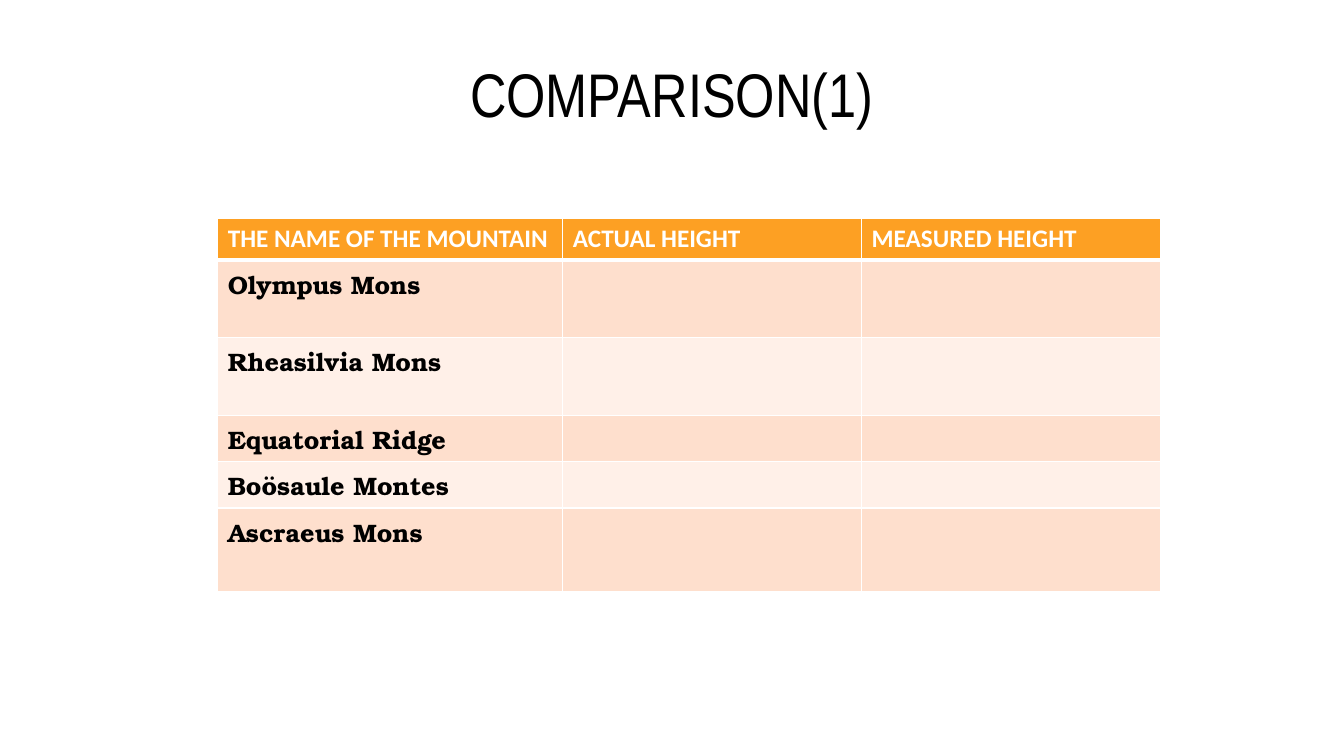
from lxml import etree
from pptx import Presentation
from pptx.dml.color import RGBColor
from pptx.enum.text import MSO_ANCHOR, PP_ALIGN
from pptx.oxml.ns import qn
from pptx.util import Inches, Pt

CENTER = PP_ALIGN.CENTER
MIDDLE = MSO_ANCHOR.MIDDLE
BLACK = RGBColor(0x00, 0x00, 0x00)
WHITE = RGBColor(0xFF, 0xFF, 0xFF)
ORANGE = RGBColor(0xFD, 0xA0, 0x23)
BANDS = (RGBColor(0xFE, 0xDF, 0xCD), RGBColor(0xFF, 0xF0, 0xE8))

SLIDE_W, SLIDE_H = 13.33, 7.5
TITLE_BOX = (0.05 * SLIDE_W, 0.04 * SLIDE_H, 0.9 * SLIDE_W, SLIDE_H / 6)
TABLE_BOX = (2.16, 2.17, 9.35, 3.7)
COLUMN_SHARES = (0.366, 0.317, 0.317)
HEADERS = ("THE NAME OF THE MOUNTAIN", "ACTUAL HEIGHT", "MEASURED HEIGHT")
HEADER_HEIGHT = 0.41
MOUNTAINS = (
    ("Olympus Mons", 0.77),
    ("Rheasilvia Mons", 0.77),
    ("Equatorial Ridge", 0.46),
    ("Boösaule Montes", 0.46),
    ("Ascraeus Mons", 0.83),
)


def style_text(p, font, size, color, bold=False):
    for r in p.runs:
        r.font.name = font
        r.font.size = Pt(size)
        r.font.bold = bold
        r.font.color.rgb = color


def add_borders(cell, bottom):
    tcPr = cell._tc.get_or_add_tcPr()
    for side, width in (("L", 1), ("R", 1), ("T", 1), ("B", bottom)):
        ln = etree.SubElement(tcPr, qn(f"a:ln{side}"), w=str(Pt(width)))
        fill = etree.SubElement(ln, qn("a:solidFill"))
        etree.SubElement(fill, qn("a:srgbClr"), val=str(WHITE))


def fill_cell(cell, text, fill, font, color, bottom=1):
    add_borders(cell, bottom)
    cell.fill.solid()
    cell.fill.fore_color.rgb = fill
    if text:
        cell.text = text
        style_text(cell.text_frame.paragraphs[0], font, 18, color, True)


def add_title(s, box, text):
    tf = s.shapes.add_textbox(*map(Inches, box)).text_frame
    tf.word_wrap = True
    tf.vertical_anchor = MIDDLE
    tf.text = text
    p = tf.paragraphs[0]
    p.alignment = CENTER
    style_text(p, "Arial Narrow", 44, BLACK)


def add_comparison(s, box):
    table = s.shapes.add_table(
        len(MOUNTAINS) + 1, len(HEADERS), *map(Inches, box)
    ).table
    for column, share in zip(table.columns, COLUMN_SHARES):
        column.width = Inches(share * box[2])
    table.rows[0].height = Inches(HEADER_HEIGHT)
    for col, header in enumerate(HEADERS):
        fill_cell(table.cell(0, col), header, ORANGE, "Calibri", WHITE, 3)
    for row, (name, height) in enumerate(MOUNTAINS, 1):
        table.rows[row].height = Inches(height)
        band = BANDS[(row - 1) % 2]
        for col in range(len(HEADERS)):
            text = name if col == 0 else ""
            fill_cell(table.cell(row, col), text, band, "TeX Gyre Bonum", BLACK)


def main():
    prs = Presentation()
    prs.slide_width = Inches(SLIDE_W)
    prs.slide_height = Inches(SLIDE_H)
    s = prs.slides.add_slide(prs.slide_layouts[6])
    add_title(s, TITLE_BOX, "COMPARISON(1)")
    add_comparison(s, TABLE_BOX)
    prs.save("out.pptx")


if __name__ == "__main__":
    main()
